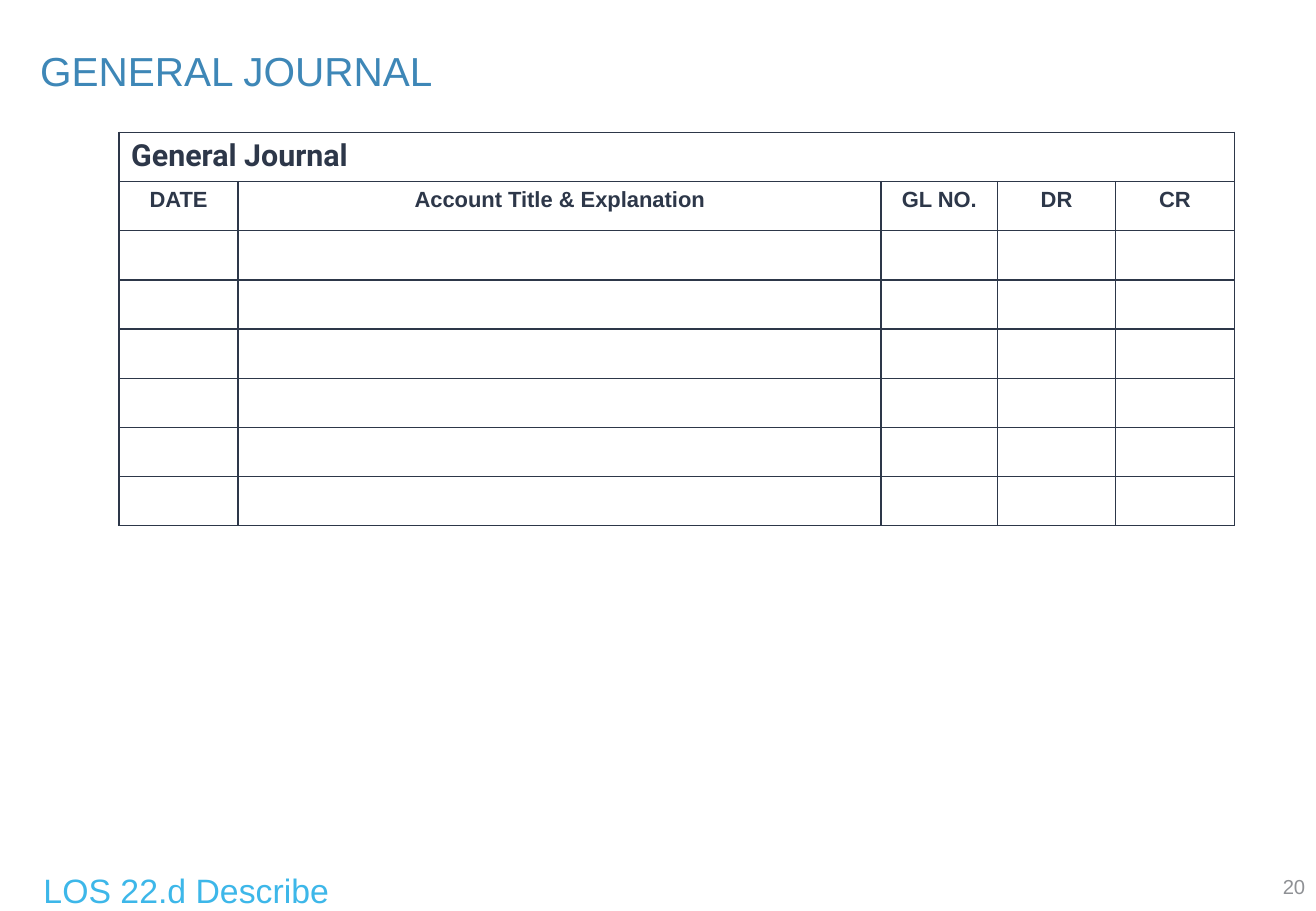
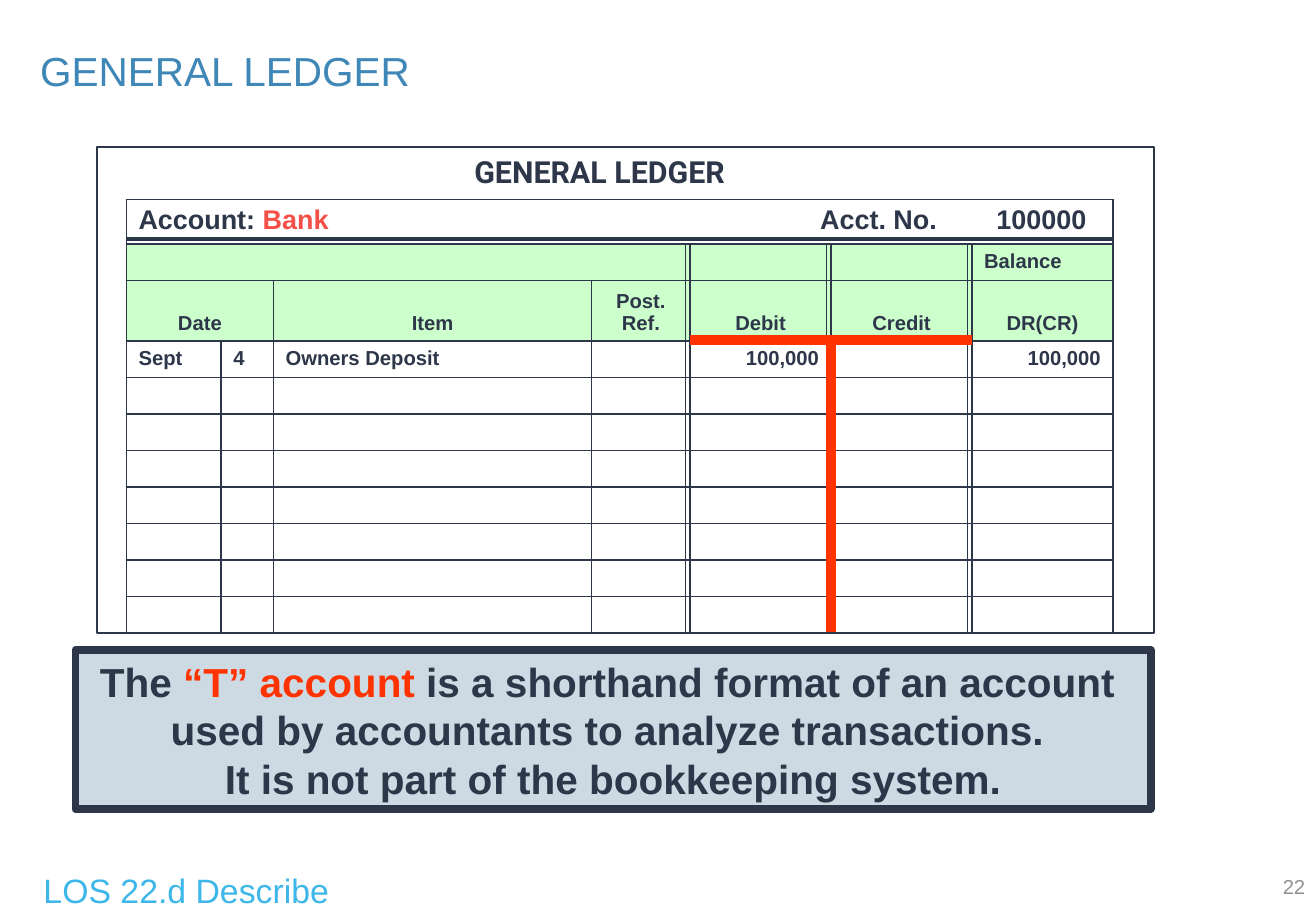
from dataclasses import dataclass
from itertools import accumulate

from lxml import etree
from pptx import Presentation
from pptx.dml.color import RGBColor
from pptx.enum import shapes, text
from pptx.oxml import ns
from pptx.util import Inches, Pt

LEFT, CENTER, RIGHT = text.PP_ALIGN.LEFT, text.PP_ALIGN.CENTER, text.PP_ALIGN.RIGHT
TOP, MIDDLE, BOTTOM = text.MSO_ANCHOR.TOP, text.MSO_ANCHOR.MIDDLE, text.MSO_ANCHOR.BOTTOM


@dataclass(frozen=True)
class Theme:
    body_font: str = "Arial"
    heading_font: str = "Roboto"
    ink: str = "2D3749"
    rule: str = "2B3648"
    title: str = "3E87B7"
    footer: str = "3DB7E9"
    page_number: str = "8F9195"
    accent: str = "FF3300"
    account: str = "F45047"
    header_fill: str = "CCFFCC"
    callout_fill: str = "CDDAE3"
    title_size: int = 24
    footer_size: int = 20
    heading_size: int = 18
    account_size: int = 16
    journal_size: int = 13
    small_size: int = 12


THEME = Theme()


def color(value):
    return RGBColor.from_string(value)


def write(paragraph, content, size, ink=THEME.ink, font=THEME.body_font, bold=False, align=LEFT):
    """Fill a paragraph with a string, or with (string, colour) parts; \\v breaks a line."""
    paragraph.alignment = align
    paragraph.font.size = Pt(size)
    paragraph.font.name = font
    paragraph.font.bold = bold
    if isinstance(content, str):
        content = [(content, ink)]
    colors = {part_color for _, part_color in content}
    if len(colors) == 1:
        paragraph.font.color.rgb = color(colors.pop())
    for words, part_color in content:
        for index, line in enumerate(words.split("\v")):
            if index:
                paragraph.add_line_break()
            run = paragraph.add_run()
            run.text = line
            if len(content) > 1:
                run.font.color.rgb = color(part_color)


def set_margins(frame, horizontal, vertical):
    frame.margin_left = frame.margin_right = Inches(horizontal)
    frame.margin_top = frame.margin_bottom = Inches(vertical)


def add_text(slide, box, content, size, anchor=TOP, margins=(0.1, 0.05), wrap=True, **style):
    frame = slide.shapes.add_textbox(*map(Inches, box)).text_frame
    frame.word_wrap = wrap
    frame.vertical_anchor = anchor
    set_margins(frame, *margins)
    write(frame.paragraphs[0], content, size, **style)


def add_box(slide, box, line_width, fill=None):
    shape = slide.shapes.add_shape(shapes.MSO_SHAPE.RECTANGLE, *map(Inches, box))
    shape.shadow.inherit = False
    if fill:
        shape.fill.solid()
        shape.fill.fore_color.rgb = color(fill)
    else:
        shape.fill.background()
    shape.line.color.rgb = color(THEME.ink)
    shape.line.width = Pt(line_width)
    return shape


def add_line(slide, start, end, line_color, width):
    line = slide.shapes.add_connector(
        shapes.MSO_CONNECTOR.STRAIGHT, *map(Inches, (*start, *end)))
    line.line.color.rgb = color(line_color)
    line.line.width = Pt(width)
    etree.SubElement(line._element.spPr, ns.qn("a:effectLst"))


def set_borders(cell):
    properties = cell._tc.get_or_add_tcPr()
    for index, side in enumerate(("lnL", "lnR", "lnT", "lnB")):
        border = etree.Element(ns.qn(f"a:{side}"), w=str(Pt(1)))
        fill = etree.SubElement(border, ns.qn("a:solidFill"))
        etree.SubElement(fill, ns.qn("a:srgbClr"), val=THEME.ink)
        properties.insert(index, border)


def set_tabs(paragraph, positions):
    tabs = etree.Element(ns.qn("a:tabLst"))
    for position in positions:
        etree.SubElement(tabs, ns.qn("a:tab"), pos=str(Inches(position)), algn="l")
    paragraph._p.get_or_add_pPr().insert(0, tabs)


def add_grid(slide, left, top, columns, rows, empty_size):
    """Add a ruled table without fills; empty cells keep the given type size."""
    table = slide.shapes.add_table(
        len(rows), len(columns), *map(Inches, (left, top, sum(columns), sum(rows)))).table
    table.first_row = table.horz_banding = False
    for column, width in zip(table.columns, columns):
        column.width = Inches(width)
    for row, height in zip(table.rows, rows):
        row.height = Inches(height)
    for cell in table.iter_cells():
        cell.fill.background()
        set_borders(cell)
        cell.text_frame.paragraphs[0]._p.get_or_add_endParaRPr().set("sz", str(empty_size * 100))
    return table


def merge(table, row, first, last):
    table.cell(row, first).merge(table.cell(row, last))


def write_cell(table, row, column, content, size, **style):
    paragraph = table.cell(row, column).text_frame.paragraphs[0]
    write(paragraph, content, size, bold=True, **style)
    return paragraph


def add_base_slide(presentation, title, number):
    slide = presentation.slides.add_slide(presentation.slide_layouts.get_by_name("Title Only"))
    heading = slide.shapes.title
    heading.left, heading.top, heading.width, heading.height = map(
        Inches, (0.33, 0.44, 10.17, 0.32))
    frame = heading.text_frame
    frame.auto_size = text.MSO_AUTO_SIZE.NONE
    frame.vertical_anchor = MIDDLE
    set_margins(frame, 0, 0.04)
    write(frame.paragraphs[0], title, THEME.title_size, ink=THEME.title)
    frame.paragraphs[0].line_spacing = 0.9
    add_text(slide, (8.4, 7.1, 2.44, 0.4), number, THEME.small_size,
             anchor=MIDDLE, ink=THEME.page_number, align=RIGHT)
    add_text(slide, (0.26, 7.11, 4.8, 0.44), "LOS 22.d Describe", THEME.footer_size,
             ink=THEME.footer)
    return slide


def add_journal(slide):
    table = add_grid(slide, 0.98, 1.09, (0.98, 5.29, 0.96, 0.97, 0.98), [3.24 / 8] * 8,
                     THEME.journal_size)
    merge(table, 0, 0, 4)
    write_cell(table, 0, 0, "General Journal", THEME.heading_size, font=THEME.heading_font)
    headers = ("DATE", "Account Title & Explanation", "GL NO.", "DR", "CR")
    for column, header in enumerate(headers):
        write_cell(table, 1, column, header, THEME.journal_size, align=CENTER)


def add_ledger(slide):
    left, top, bottom = 1.04, 1.64, 5.2
    columns = (0.78, 0.43, 2.62, 0.81, 1.16, 1.16, 1.16)
    rows = (0.36, 0.3, 0.5) + (0.3,) * 8
    size = THEME.small_size
    table = add_grid(slide, left, top, columns, rows, size)
    for row, first, last in ((0, 0, 6), (1, 0, 3), (2, 0, 1)):
        merge(table, row, first, last)
    for row in (1, 2):
        for column in range(len(columns)):
            cell = table.cell(row, column)
            cell.fill.solid()
            cell.fill.fore_color.rgb = color(THEME.header_fill)
            cell.vertical_anchor = BOTTOM if row == 2 else TOP

    account = [("Account: ", THEME.ink), ("Bank", THEME.account),
               ("\tAcct. No.\t100000", THEME.ink)]
    set_tabs(write_cell(table, 0, 0, account, THEME.account_size), (5.61, 7.06))
    write_cell(table, 1, 6, "Balance", size)
    headers = {0: "Date", 2: "Item", 3: "Post.\vRef.", 4: "Debit", 5: "Credit", 6: "DR(CR)"}
    for column, header in headers.items():
        write_cell(table, 2, column, header, size, align=CENTER)
    entry = {0: "Sept", 1: "4", 2: "Owners Deposit", 4: "100,000", 6: "100,000"}
    for column, value in entry.items():
        write_cell(table, 3, column, value, size, align=RIGHT if column > 3 else LEFT)

    edges = list(accumulate(columns, initial=left))
    add_line(slide, (left, 1.97), (edges[-1], 1.97), THEME.rule, 2.25)
    for edge in edges[4:7]:
        add_line(slide, (edge - 0.04, 2), (edge - 0.04, bottom), THEME.rule, 0.75)
    add_line(slide, (edges[5], 2.84), (edges[5], bottom), THEME.accent, 6)
    add_line(slide, (edges[4], 2.8), (edges[6], 2.8), THEME.accent, 6)
    add_box(slide, (0.8, 1.21, 8.7, 4), 1)
    add_text(slide, (3.76, 1.26, 2.35, 0.3), "GENERAL LEDGER", THEME.heading_size,
             margins=(0, 0), wrap=False, font=THEME.heading_font, bold=True, align=CENTER)


def add_callout(slide):
    frame = add_box(slide, (0.62, 5.35, 8.85, 1.31), 4.5, THEME.callout_fill).text_frame
    frame.word_wrap = False
    frame.vertical_anchor = MIDDLE
    set_margins(frame, 0.1, 0.05)
    content = [
        ("The ", THEME.ink),
        ("“T” account", THEME.accent),
        (" is a shorthand format of an account \vused by accountants to analyze transactions. "
         "\vIt is not part of the bookkeeping system.", THEME.ink),
    ]
    write(frame.paragraphs[0], content, THEME.title_size, bold=True, align=CENTER)


def main():
    presentation = Presentation()
    presentation.slide_width, presentation.slide_height = Inches(10.83), Inches(7.5)
    add_journal(add_base_slide(presentation, "GENERAL JOURNAL", "20"))
    ledger_slide = add_base_slide(presentation, "GENERAL LEDGER", "22")
    add_ledger(ledger_slide)
    add_callout(ledger_slide)
    presentation.save("out.pptx")


if __name__ == "__main__":
    main()
